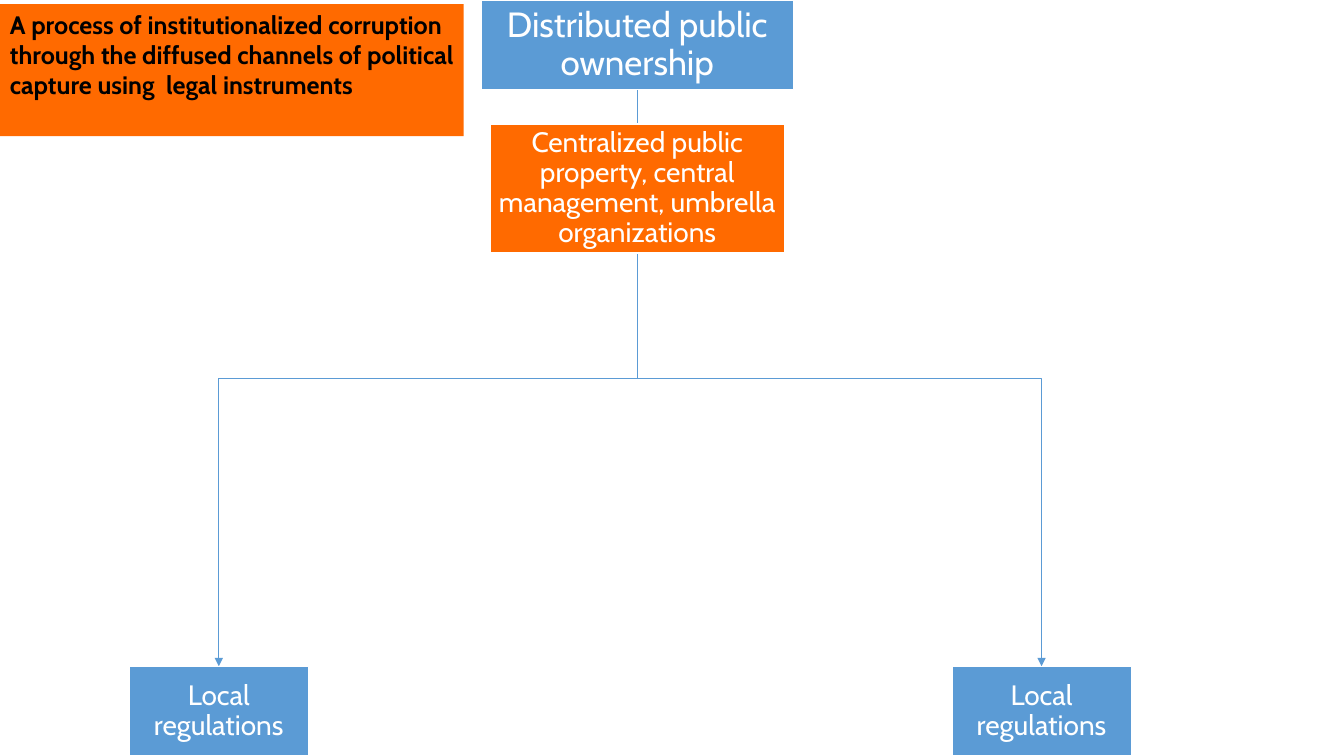
"""Slide: how distributed public ownership is captured through central bodies."""
import dataclasses

import lxml.etree
import pptx
import pptx.dml.color
import pptx.enum.shapes
import pptx.enum.text
import pptx.oxml.ns
import pptx.util

PX = 9144
BLUE, ORANGE, WHITE, BLACK = "5B9BD5", "FF6A00", "FFFFFF", "000000"
PARENT_X, PARENT_BOTTOM, CHILD_TOP = 632, 89, 661
CHILD_W, CHILD_H = 178, 89
CHILD_CENTRES = (1033, 217)


@dataclasses.dataclass(frozen=True)
class Box:
    """A filled rectangle with one paragraph of text."""

    text: str
    x: int
    y: int
    w: int
    h: int
    fill: str = BLUE
    size: int = 20


@dataclasses.dataclass(frozen=True)
class Banner(Box):
    """A borderless box with bold, left-aligned text."""


def px(n: float) -> int:
    """Convert px to EMU."""
    return round(n * PX)


def rgb(value: str) -> pptx.dml.color.RGBColor:
    """Turn a hex string into a colour."""
    return pptx.dml.color.RGBColor.from_string(value)


def apply(target: object, values: dict) -> None:
    """Set each attribute named in a dict."""
    for name, value in values.items():
        setattr(target, name, value)


def draw_box(s, box: Box) -> None:
    """Draw a box and its text."""
    banner = isinstance(box, Banner)
    sp = s.shapes.add_shape(
        pptx.enum.shapes.MSO_SHAPE.RECTANGLE, px(box.x), px(box.y), px(box.w), px(box.h)
    )
    sp.shadow.inherit = False
    sp.fill.solid()
    sp.fill.fore_color.rgb = rgb(box.fill)
    if banner:
        sp.line.fill.background()
    else:
        sp.line.color.rgb = rgb(WHITE)
        sp.line.width = pptx.util.Pt(1)
    tf = sp.text_frame
    anchor, align = pptx.enum.text.MSO_ANCHOR, pptx.enum.text.PP_ALIGN
    side, edge = (10, 5) if banner else (2, 2)
    apply(tf, {
        "word_wrap": True,
        "vertical_anchor": anchor.TOP if banner else anchor.MIDDLE,
        "margin_left": px(side),
        "margin_right": px(side),
        "margin_top": px(edge),
        "margin_bottom": px(edge),
    })
    p = tf.paragraphs[0]
    apply(p, {
        "alignment": align.LEFT if banner else align.CENTER,
        "line_spacing": 1.0 if banner else 0.9,
    })
    r = p.add_run()
    r.text = box.text
    apply(r.font, {"name": "Cabin", "size": pptx.util.Pt(box.size), "bold": banner})
    r.font.color.rgb = rgb(BLACK if banner else WHITE)


def draw_elbow(s, x1: int, y1: int, x2: int, y2: int) -> None:
    """Draw an arrow that runs down, across and down again."""
    cx, cy = (x1 + x2) / 2, (y1 + y2) / 2
    half_w, half_h = (y2 - y1) / 2, abs(x2 - x1) / 2
    turn, sign = (90, 1) if x2 < x1 else (270, -1)
    c = s.shapes.add_connector(
        pptx.enum.shapes.MSO_CONNECTOR.ELBOW,
        px(cx - sign * half_w), px(cy - half_h),
        px(cx + sign * half_w), px(cy + half_h),
    )
    c.line.color.rgb = rgb(BLUE)
    c.line.width = pptx.util.Pt(0.5)
    qn = pptx.oxml.ns.qn
    props = c._element.spPr
    props.find(qn("a:xfrm")).set("rot", str(turn * 60000))
    lxml.etree.SubElement(props.find(qn("a:ln")), qn("a:tailEnd"), type="triangle")
    lxml.etree.SubElement(props, qn("a:effectLst"))


def main() -> None:
    """Build and save the slide."""
    prs = pptx.Presentation()
    apply(prs, {"slide_width": pptx.util.Inches(13.33), "slide_height": pptx.util.Inches(7.5)})
    s = prs.slides.add_slide(prs.slide_layouts[6])
    for x in CHILD_CENTRES:
        draw_elbow(s, PARENT_X, PARENT_BOTTOM, x, CHILD_TOP)
        draw_box(s, Box("Local regulations", x - CHILD_W // 2, CHILD_TOP, CHILD_W, CHILD_H))
    for box in (
        Box("Distributed public ownership", 477, 0, 310, 89, size=25),
        Box("Centralized public property, central management, umbrella organizations",
            486, 123, 292, 128, ORANGE),
        Banner("A process of institutionalized corruption through the diffused channels of "
               "political capture using  legal instruments", 0, 4, 460, 131, ORANGE, 18),
    ):
        draw_box(s, box)
    prs.save("out.pptx")


if __name__ == "__main__":
    main()
